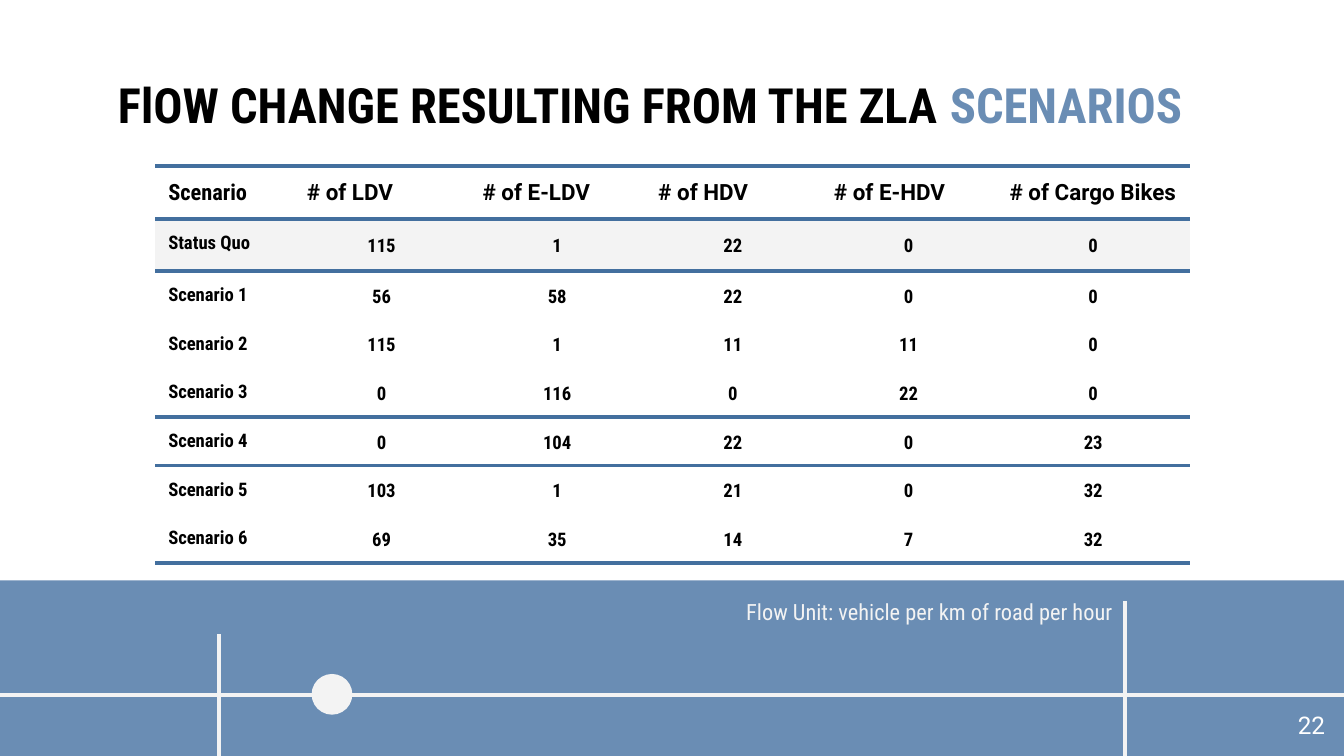
"""Builds the slide on flow changes resulting from the ZLA scenarios."""
from lxml import etree
from pptx import Presentation
from pptx.dml.color import RGBColor
from pptx.enum.shapes import MSO_CONNECTOR, MSO_SHAPE
from pptx.enum.text import MSO_ANCHOR, PP_ALIGN
from pptx.oxml import parse_xml
from pptx.oxml.ns import nsdecls, qn
from pptx.util import Cm, Pt

RECTANGLE, OVAL = MSO_SHAPE.RECTANGLE, MSO_SHAPE.OVAL
STRAIGHT = MSO_CONNECTOR.STRAIGHT
MIDDLE = MSO_ANCHOR.MIDDLE
LEFT, CENTER, RIGHT = PP_ALIGN.LEFT, PP_ALIGN.CENTER, PP_ALIGN.RIGHT
COLORS = {"band": "6A8DB4", "rule": "436F9E", "pale": "F3F3F3", "white": "FFFFFF", "black": "000000"}
SANS, CONDENSED = "Roboto", "Roboto Condensed"
NO_STYLE = "{2D5ABB26-0587-4C30-8999-92F81FD0307C}"


def write(frame, parts, size, face, bold=False, align=LEFT):
    paragraph = frame.paragraphs[0]
    paragraph.alignment = align
    for words, color in parts:
        run = paragraph.add_run()
        run.text = words
        run.font.size = Pt(size)
        run.font.name = face
        run.font.bold = bold
        run.font.color.rgb = RGBColor.from_string(COLORS[color])


def set_margins(target, side, upright):
    target.margin_left = target.margin_right = Cm(side)
    target.margin_top = target.margin_bottom = Cm(upright)


prs = Presentation()
prs.slide_width, prs.slide_height = Cm(25.4), Cm(14.29)
slide = prs.slides.add_slide(prs.slide_layouts[6])
shapes = slide.shapes

band = shapes.add_shape(RECTANGLE, Cm(-0.05), Cm(10.97), Cm(25.5), Cm(3.38))
roads = [(-0.05, 13.13, 25.45, 13.13), (4.14, 11.99, 4.14, 14.35), (21.26, 11.36, 21.26, 14.35)]
for ends in roads:
    road = shapes.add_connector(STRAIGHT, *[Cm(value) for value in ends])
    road.line.color.rgb = RGBColor.from_string(COLORS["pale"])
    road.line.width = Pt(2.25)
    etree.SubElement(road.element.spPr, qn("a:effectLst"))
junction = shapes.add_shape(OVAL, Cm(5.89), Cm(12.74), Cm(0.77), Cm(0.77))
for part, color in [(band, "band"), (junction, "pale")]:
    part.shadow.inherit = False
    part.fill.solid()
    part.fill.fore_color.rgb = RGBColor.from_string(COLORS[color])
    part.line.fill.background()

flows = [
    ("Scenario", "# of LDV", "# of E-LDV", "# of HDV", "# of E-HDV", "# of Cargo Bikes"),
    ("Status Quo", "115", "1", "22", "0", "0"),
    ("Scenario 1", "56", "58", "22", "0", "0"),
    ("Scenario 2", "115", "1", "11", "11", "0"),
    ("Scenario 3", "0", "116", "0", "22", "0"),
    ("Scenario 4", "0", "104", "22", "0", "23"),
    ("Scenario 5", "103", "1", "21", "0", "32"),
    ("Scenario 6", "69", "35", "14", "7", "32"),
]
column_widths = [2.62] + [3.32] * 4 + [3.66]
row_heights = [1, 0.98] + [0.92] * 6
ruled_edges = {"lnT": (0, 1, 5), "lnB": (0, 4, 7)}

flow_frame = shapes.add_table(len(flows), len(column_widths), Cm(2.93), Cm(3.14),
                              Cm(sum(column_widths)), Cm(sum(row_heights)))
flow_table = flow_frame.table
flow_table.first_row = flow_table.horz_banding = False
flow_table._tbl.tblPr.find(qn("a:tableStyleId")).text = NO_STYLE
for column, width in zip(flow_table.columns, column_widths):
    column.width = Cm(width)
for row, height in zip(flow_table.rows, row_heights):
    row.height = Cm(height)

for r, record in enumerate(flows):
    for c, entry in enumerate(record):
        cell = flow_table.cell(r, c)
        is_count = r > 0 and c > 0
        set_margins(cell, 0.08 if is_count else 0.25, 0.05 if is_count and r > 1 else 0.25)
        write(cell.text_frame, [(entry, "black")], 10 if r else 12,
              SANS if r == 0 and c else CONDENSED, True, CENTER if is_count else LEFT)
        if c:
            cell.vertical_anchor = MIDDLE
        if is_count:
            cell.text_frame.paragraphs[0].line_spacing = 1.15
        for edge, ruled_rows in ruled_edges.items():
            if r in ruled_rows:
                cell._tc.get_or_add_tcPr().append(parse_xml(
                    f'<a:{edge} {nsdecls("a")} w="{Pt(2.25)}"><a:solidFill>'
                    f'<a:srgbClr val="{COLORS["rule"]}"/></a:solidFill></a:{edge}>'))
        if r == 1 or is_count:
            cell.fill.solid()
            cell.fill.fore_color.rgb = RGBColor.from_string(COLORS["pale" if r == 1 else "white"])
        else:
            cell.fill.background()

texts = [
    ((1.98, 1.17, 21.44, 1.6), [("FlOW CHANGE RESULTING FROM THE ZLA ", "black"), ("SCENARIOS", "band")],
     26, CONDENSED, True, LEFT),
    ((23.77, 13.18, 1.52, 1.09), [("22", "white")], 13, SANS, False, RIGHT),
    ((12.57, 11.05, 8.71, 1.55), [("Flow Unit: vehicle per km of road per hour", "pale")],
     12, CONDENSED, False, RIGHT),
]
for place, parts, size, face, bold, align in texts:
    frame = shapes.add_textbox(*[Cm(value) for value in place]).text_frame
    frame.word_wrap = True
    set_margins(frame, 0.25, 0.25)
    write(frame, parts, size, face, bold, align)

prs.save("out.pptx")
